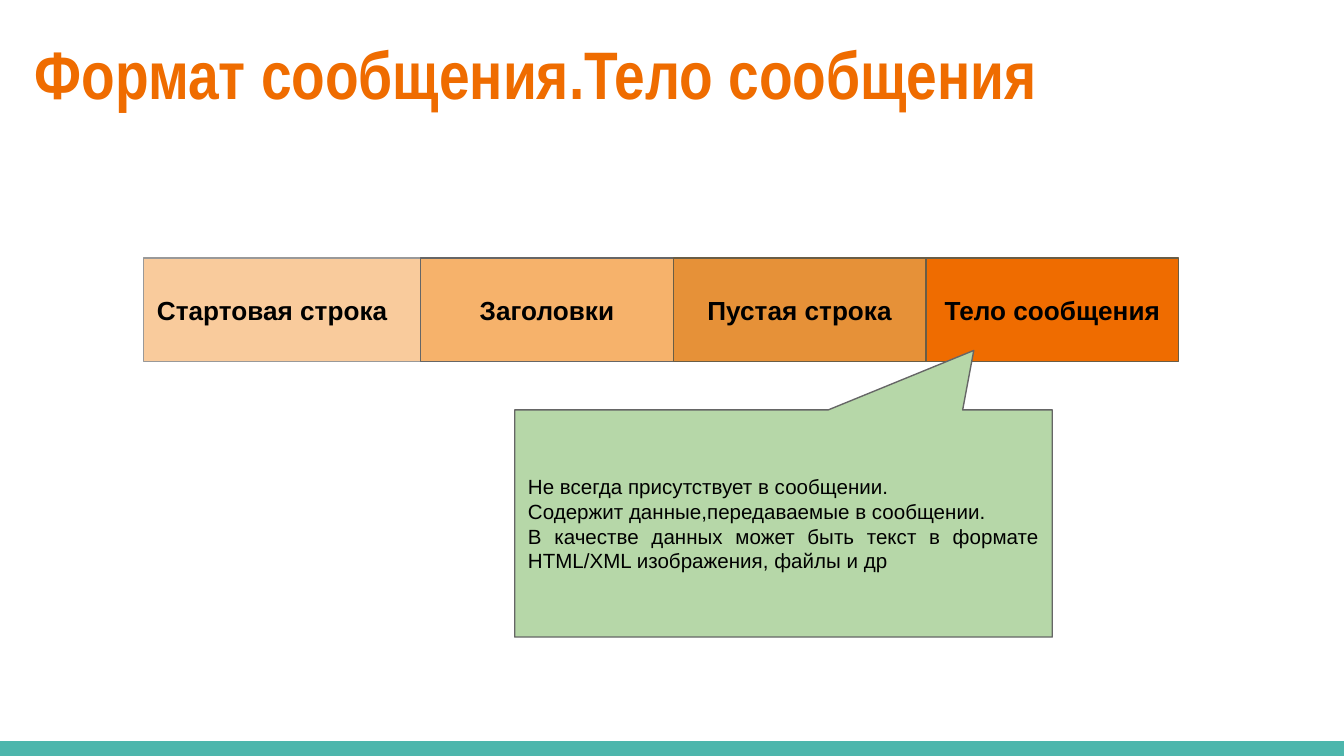
from pptx import Presentation
from pptx.dml.color import RGBColor
from pptx.enum.shapes import MSO_SHAPE
from pptx.enum.text import MSO_ANCHOR, PP_ALIGN
from pptx.util import Inches, Pt

SLIDE_WIDTH = 10
SLIDE_HEIGHT = SLIDE_WIDTH * 9 / 16
ORANGE = "EF6C00"
FRAME_FORMAT = {
    "word_wrap": True,
    "margin_left": Inches(0.1),
    "margin_right": Inches(0.1),
    "margin_top": Inches(0.1),
    "margin_bottom": Inches(0.1),
}
TITLE_FONT = {"name": "Arial Narrow", "size": Pt(36), "bold": True}
PART_FONT = {"name": "Arial", "size": Pt(14), "bold": True}
NOTE_FONT = {"name": "Arial", "size": Pt(11), "bold": False}

# Label, width, fill, outline, alignment
MESSAGE_PARTS = [
    ("Стартовая строка", 2.06, "F9CB9C", "999999", PP_ALIGN.LEFT),
    ("Заголовки", 1.88, "F6B26B", "666666", PP_ALIGN.CENTER),
    ("Пустая строка", 1.88, "E69138", "695D46", PP_ALIGN.CENTER),
    ("Тело сообщения", 1.88, ORANGE, "695D46", PP_ALIGN.CENTER),
]
BODY_NOTES = [
    "Не всегда присутствует в сообщении.",
    "Содержит данные,передаваемые в сообщении.",
    "В качестве данных может быть текст в формате HTML/XML изображения, файлы и др",
]


def color(hex_string):
    return RGBColor.from_string(hex_string)


def apply_format(target, values):
    for attribute, value in values.items():
        setattr(target, attribute, value)


def write_text(shape, lines, font, font_color, align, anchor):
    frame = shape.text_frame
    apply_format(frame, FRAME_FORMAT)
    frame.vertical_anchor = anchor
    frame.text = "\n".join(lines)
    for paragraph in frame.paragraphs:
        paragraph.alignment = align
        for run in paragraph.runs:
            apply_format(run.font, font)
            run.font.color.rgb = color(font_color)


def add_block(slide, kind, box, fill, outline=None):
    block = slide.shapes.add_shape(kind, *map(Inches, box))
    block.shadow.inherit = False
    block.fill.solid()
    block.fill.fore_color.rgb = color(fill)
    if outline:
        block.line.color.rgb = color(outline)
        block.line.width = Pt(0.75)
    else:
        block.line.fill.background()
    return block


def place_title(slide, box, text):
    title = slide.shapes.title
    title.left, title.top, title.width, title.height = map(Inches, box)
    write_text(title, [text], TITLE_FONT, ORANGE, PP_ALIGN.LEFT, MSO_ANCHOR.TOP)


def add_message_parts(slide, left, top, height):
    for label, width, fill, outline, align in MESSAGE_PARTS:
        part = add_block(slide, MSO_SHAPE.RECTANGLE,
                         (left, top, width, height), fill, outline)
        write_text(part, [label], PART_FONT, "000000", align, MSO_ANCHOR.MIDDLE)
        left += width


def add_body_callout(slide, box):
    callout = add_block(slide, MSO_SHAPE.ROUNDED_RECTANGULAR_CALLOUT,
                        box, "B6D7A8", "666666")
    for index, value in enumerate((0.354, -0.762, 0)):
        callout.adjustments[index] = value
    write_text(callout, BODY_NOTES, NOTE_FONT, "000000",
               PP_ALIGN.JUSTIFY, MSO_ANCHOR.MIDDLE)


def add_footer_band(slide, height):
    add_block(slide, MSO_SHAPE.RECTANGLE,
              (0, SLIDE_HEIGHT - height, SLIDE_WIDTH, height), "4DB6AC")


def main():
    deck = Presentation()
    deck.slide_width = Inches(SLIDE_WIDTH)
    deck.slide_height = Inches(SLIDE_HEIGHT)
    slide = deck.slides.add_slide(deck.slide_layouts[5])
    add_footer_band(slide, 0.11)
    place_title(slide, (0.16, 0.14, 9.32, 0.77), "Формат сообщения.Тело сообщения")
    add_message_parts(slide, 1.07, 1.92, 0.77)
    add_body_callout(slide, (3.83, 3.05, 4, 1.69))
    deck.save("out.pptx")


if __name__ == "__main__":
    main()
